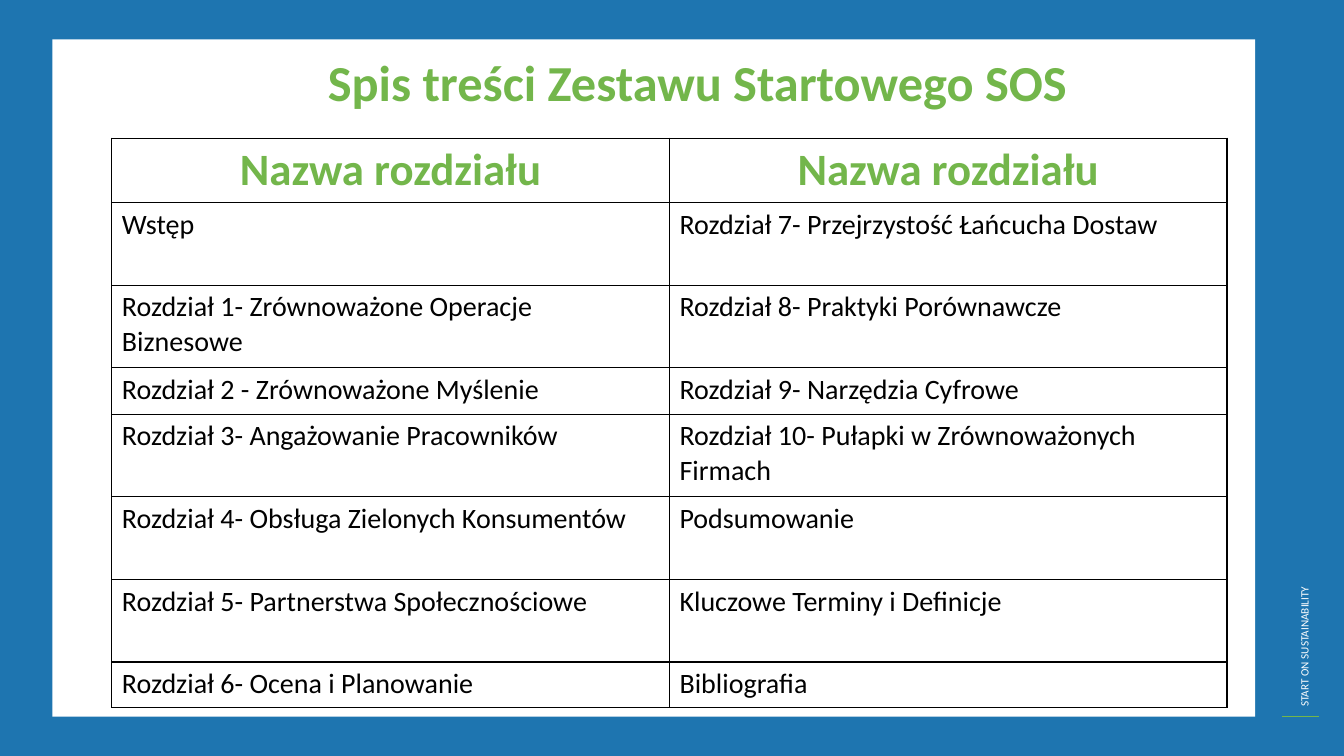
"""Build the table-of-contents slide of the SOS starter kit."""
from dataclasses import dataclass

from lxml import etree
from pptx import Presentation
from pptx.dml.color import RGBColor
from pptx.enum.shapes import MSO_CONNECTOR, MSO_SHAPE
from pptx.enum.text import PP_ALIGN
from pptx.oxml.ns import qn
from pptx.slide import Slide
from pptx.table import _Cell
from pptx.text.text import TextFrame
from pptx.util import Inches, Pt

RECTANGLE = MSO_SHAPE.RECTANGLE
STRAIGHT = MSO_CONNECTOR.STRAIGHT
LEFT, CENTER = PP_ALIGN.LEFT, PP_ALIGN.CENTER

BLUE, GREEN, WHITE, INK, BLACK = "1E75B0", "73B64B", "FFFFFF", "010101", "000000"
SLIDE_WIDTH, SLIDE_HEIGHT = 13.33, 7.5
TABLE_LEFT, TABLE_TOP, COLUMN_WIDTH = 1.11, 1.37, 5.53
BORDER_SIDES = ("a:lnL", "a:lnR", "a:lnT", "a:lnB")


@dataclass(frozen=True)
class Box:
    left: float
    top: float
    width: float
    height: float

    def lengths(self) -> tuple:
        return tuple(map(Inches, (self.left, self.top, self.width, self.height)))


@dataclass(frozen=True)
class TextStyle:
    size: float
    color: str
    bold: bool = False
    align: PP_ALIGN = LEFT


@dataclass(frozen=True)
class Panel:
    box: Box
    color: str


@dataclass(frozen=True)
class Label:
    text: str
    box: Box
    style: TextStyle
    rotation: float = 0


@dataclass(frozen=True)
class ChapterRow:
    height: float
    first: str
    second: str


HEADING = TextStyle(32, GREEN, True, CENTER)
CHAPTER = TextStyle(20, INK)

PANELS = (
    Panel(Box(0, 0, SLIDE_WIDTH, SLIDE_HEIGHT), BLUE),
    Panel(Box(0.52, 0.39, 11.93, 6.72), WHITE),
)
LABELS = (
    Label("START ON SUSTAINABILITY", Box(10.71, 4.76, 4.46, 0.24), TextStyle(8, WHITE), 270),
    Label("Spis treści Zestawu Startowego SOS", Box(1.45, 0.46, 10.94, 0.7),
          TextStyle(36, GREEN, True, CENTER)),
)
CHAPTER_ROWS = (
    ChapterRow(0.64, "Nazwa rozdziału", "Nazwa rozdziału"),
    ChapterRow(0.82, "Wstęp", "Rozdział 7- Przejrzystość Łańcucha Dostaw"),
    ChapterRow(0.82, "Rozdział 1- Zrównoważone Operacje Biznesowe",
               "Rozdział 8- Praktyki Porównawcze"),
    ChapterRow(0.46, "Rozdział 2 - Zrównoważone Myślenie", "Rozdział 9- Narzędzia Cyfrowe"),
    ChapterRow(0.82, "Rozdział 3- Angażowanie Pracowników",
               "Rozdział 10- Pułapki w Zrównoważonych Firmach"),
    ChapterRow(0.82, "Rozdział 4- Obsługa Zielonych Konsumentów", "Podsumowanie"),
    ChapterRow(0.82, "Rozdział 5- Partnerstwa Społecznościowe", "Kluczowe Terminy i Definicje"),
    ChapterRow(0.45, "Rozdział 6- Ocena i Planowanie", "Bibliografia"),
)


def rgb(color: str) -> RGBColor:
    return RGBColor.from_string(color)


def write_text(frame: TextFrame, text: str, style: TextStyle) -> None:
    frame.word_wrap = True
    paragraph = frame.paragraphs[0]
    paragraph.alignment = style.align
    run = paragraph.add_run()
    run.text = text
    font_format = {"name": "Calibri", "size": Pt(style.size), "bold": style.bold}
    for attribute, value in font_format.items():
        setattr(run.font, attribute, value)
    run.font.color.rgb = rgb(style.color)


def draw_panel(slide: Slide, panel: Panel) -> None:
    shape = slide.shapes.add_shape(RECTANGLE, *panel.box.lengths())
    shape.shadow.inherit = False
    shape.fill.solid()
    shape.fill.fore_color.rgb = rgb(panel.color)
    shape.line.fill.background()


def draw_label(slide: Slide, label: Label) -> None:
    text_box = slide.shapes.add_textbox(*label.box.lengths())
    text_box.rotation = label.rotation
    write_text(text_box.text_frame, label.text, label.style)


def draw_accent(slide: Slide) -> None:
    accent = slide.shapes.add_connector(
        STRAIGHT, Inches(12.72), Inches(7.11), Inches(13.08), Inches(7.11))
    accent.line.color.rgb = rgb(GREEN)
    accent.line.width = Pt(1)
    etree.SubElement(accent._element.spPr, qn("a:effectLst"))


def add_borders(cell: _Cell) -> None:
    properties = cell._tc.get_or_add_tcPr()
    for side in BORDER_SIDES:
        border = etree.SubElement(properties, qn(side), w=str(Pt(1)))
        fill = etree.SubElement(border, qn("a:solidFill"))
        etree.SubElement(fill, qn("a:srgbClr"), val=BLACK)


def draw_contents(slide: Slide, rows: tuple[ChapterRow, ...]) -> None:
    box = Box(TABLE_LEFT, TABLE_TOP, 2 * COLUMN_WIDTH, sum(row.height for row in rows))
    contents = slide.shapes.add_table(len(rows), 2, *box.lengths()).table
    contents.horz_banding = False
    for column in contents.columns:
        column.width = Inches(COLUMN_WIDTH)
    for row_index, row in enumerate(rows):
        contents.rows[row_index].height = Inches(row.height)
        style = CHAPTER if row_index else HEADING
        for column_index, text in enumerate((row.first, row.second)):
            cell = contents.cell(row_index, column_index)
            add_borders(cell)
            cell.fill.solid()
            cell.fill.fore_color.rgb = rgb(WHITE)
            write_text(cell.text_frame, text, style)


def main() -> None:
    presentation = Presentation()
    presentation.slide_width = Inches(SLIDE_WIDTH)
    presentation.slide_height = Inches(SLIDE_HEIGHT)
    slide = presentation.slides.add_slide(presentation.slide_layouts[6])
    for panel in PANELS:
        draw_panel(slide, panel)
    for label in LABELS:
        draw_label(slide, label)
    draw_accent(slide)
    draw_contents(slide, CHAPTER_ROWS)
    presentation.save("out.pptx")


if __name__ == "__main__":
    main()
